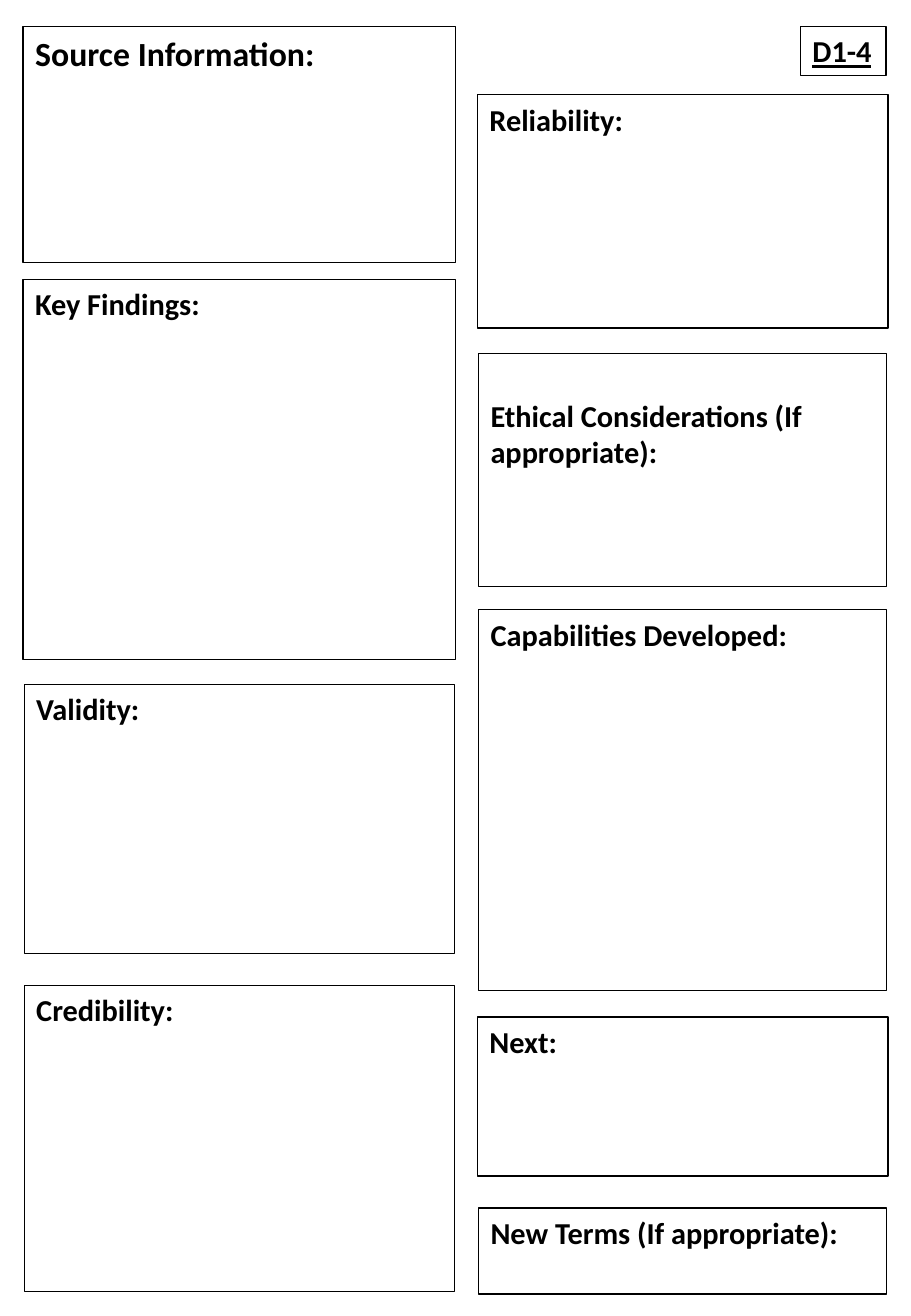
"""Build a one-page source analysis worksheet with labelled answer boxes."""
from dataclasses import dataclass

from pptx import Presentation
from pptx.dml.color import RGBColor
from pptx.enum.text import MSO_ANCHOR, MSO_AUTO_SIZE, PP_ALIGN
from pptx.util import Pt

TOP = MSO_ANCHOR.TOP
FIXED = MSO_AUTO_SIZE.NONE
LEFT = PP_ALIGN.LEFT


@dataclass(frozen=True)
class Theme:
    font: str = "Calibri"
    ink: RGBColor = RGBColor(0, 0, 0)
    paper: RGBColor = RGBColor(255, 255, 255)
    title_size: int = 20
    label_size: int = 18
    title_line: float = 1
    label_line: float = 0.75
    inset: float = 3.6


THEME = Theme()


def frame_box(box, bounds, label, size, line_width):
    """Place a box, outline it and write its bold label at the top left."""
    box.left, box.top, box.width, box.height = (Pt(value) for value in bounds)
    box.line.color.rgb = THEME.ink
    box.line.width = Pt(line_width)
    frame = box.text_frame
    frame.text = label
    frame.word_wrap = True
    frame.auto_size = FIXED
    frame.vertical_anchor = TOP
    para = frame.paragraphs[0]
    para.alignment = LEFT
    font = para.runs[0].font
    font.name = THEME.font
    font.size = Pt(size)
    font.bold = True
    font.color.rgb = THEME.ink
    return frame


deck = Presentation()
deck.slide_width, deck.slide_height = Pt(540), Pt(779.76)
page = deck.slides.add_slide(deck.slide_layouts[5])

title = page.shapes.title
title.fill.solid()
title.fill.fore_color.rgb = THEME.paper
frame_box(title, (13.7, 15.8, 256.3, 139.7), "Source Information:",
          THEME.title_size, THEME.title_line)

sections = {
    "Key Findings:": (13.7, 165.6, 256.3, 225.4),
    "Validity:": (14.4, 405.4, 254.9, 159.8),
    "Credibility:": (14.4, 583.9, 254.9, 181.4),
    "D1-4": (474.5, 15.8, 50.8, 28.8),
    "Reliability:": (283, 56.2, 243.4, 138.2),
    "Ethical Considerations (If appropriate):": (283.7, 209.5, 241.9, 138.2),
    "Capabilities Developed:": (283.7, 361.4, 241.9, 225.4),
    "Next:": (283, 602.6, 243.4, 94.3),
    "New Terms (If appropriate):": (283.7, 715.7, 241.9, 51.1),
}
for label, bounds in sections.items():
    box = page.shapes.add_textbox(0, 0, 0, 0)
    frame = frame_box(box, bounds, label, THEME.label_size, THEME.label_line)
    if label == "D1-4":
        frame.paragraphs[0].runs[0].font.underline = True
    if label.startswith("Ethical"):
        frame.margin_top = Pt(THEME.inset + 22)

deck.save("out.pptx")
